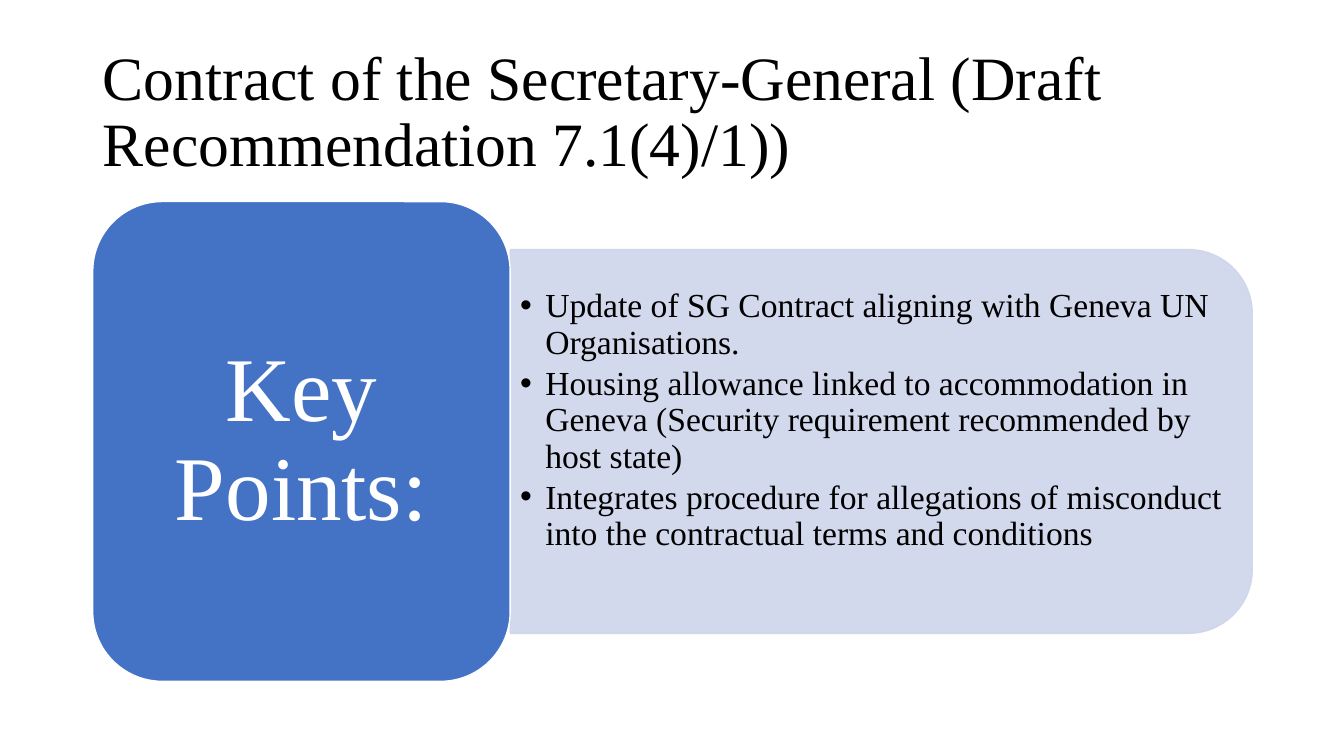
from lxml import etree
from pptx import Presentation
from pptx.dml.color import RGBColor
from pptx.enum.shapes import MSO_SHAPE as Shape
from pptx.enum.text import MSO_ANCHOR as Anchor, MSO_AUTO_SIZE as AutoSize, PP_ALIGN as Align
from pptx.oxml.ns import qn
from pptx.util import Inches, Pt

FONT = "Times New Roman"
BLACK, WHITE, BLUE, PALE_BLUE = "000000", "FFFFFF", "4472C4", "CFD5EA"

TITLE = "Contract of the Secretary-General (Draft Recommendation 7.1(4)/1))"
KEY_POINTS = [
    "Update of SG Contract aligning with Geneva UN Organisations.",
    "Housing allowance linked to accommodation in Geneva "
    "(Security requirement recommended by host state)",
    "Integrates procedure for allegations of misconduct "
    "into the contractual terms and conditions",
]


def rgb(color):
    return RGBColor.from_string(color)


def add_bullet(paragraph, indent):
    properties = paragraph._p.get_or_add_pPr()
    properties.set("marL", str(Inches(indent)))
    properties.set("indent", str(-Inches(indent)))
    etree.SubElement(properties, qn("a:buFont")).set("typeface", "Arial")
    etree.SubElement(properties, qn("a:buChar")).set("char", "•")


def write_text(shape, lines, size, color=BLACK, align=Align.LEFT, after=0,
               insets=(0.1, 0.05, 0.1, 0.05), bullet_indent=None):
    frame = shape.text_frame
    frame.word_wrap = True
    frame.auto_size = AutoSize.NONE
    frame.vertical_anchor = Anchor.MIDDLE
    (frame.margin_left, frame.margin_top,
     frame.margin_right, frame.margin_bottom) = map(Inches, insets)
    for index, line in enumerate(lines):
        paragraph = frame.add_paragraph() if index else frame.paragraphs[0]
        paragraph.alignment = align
        paragraph.line_spacing = 0.9
        paragraph.space_before = Pt(0)
        paragraph.space_after = Pt(after)
        if bullet_indent:
            add_bullet(paragraph, bullet_indent)
        run = paragraph.add_run()
        run.text = line
        run.font.name = FONT
        run.font.size = Pt(size)
        run.font.color.rgb = rgb(color)


def add_box(slide, kind, left, top, width, height, fill, line, opacity=None):
    shape = slide.shapes.add_shape(kind, *map(Inches, (left, top, width, height)))
    shape.shadow.inherit = False
    shape.fill.solid()
    shape.fill.fore_color.rgb = rgb(fill)
    shape.line.color.rgb = rgb(line)
    shape.line.width = Pt(1)
    if opacity:
        for color in shape._element.spPr.iter(qn("a:srgbClr")):
            etree.SubElement(color, qn("a:alpha")).set("val", str(opacity * 1000))
    return shape


def add_title(slide, left, top, width, height):
    title = slide.shapes.title
    title.left, title.top, title.width, title.height = map(
        Inches, (left, top, width, height))
    write_text(title, [TITLE], 44)


def add_key_points(slide, left, top, width, height):
    label_width = 0.36 * width
    panel_left, panel_width = left + label_width, width - label_width
    panel_height = 0.8 * height
    middle = top + height / 2

    # Pale panel: a shape with two rounded top corners, turned to the right
    panel = add_box(slide, Shape.ROUND_2_SAME_RECTANGLE,
                    panel_left + (panel_width - panel_height) / 2,
                    middle - panel_width / 2,
                    panel_height, panel_width, PALE_BLUE, PALE_BLUE, opacity=90)
    panel.rotation = 90

    # Bulleted points, held above the middle by a deeper bottom inset
    text_height = panel_height - 0.37
    points = slide.shapes.add_textbox(*map(Inches, (
        panel_left, middle - text_height / 2, panel_width - 0.19, text_height)))
    write_text(points, KEY_POINTS, 24, after=3.6, bullet_indent=0.25,
               insets=(0.1, 0.05, 0.1, 0.46))

    # Blue label
    label = add_box(slide, Shape.ROUNDED_RECTANGLE, left, top, label_width, height,
                    BLUE, WHITE)
    write_text(label, ["Key Points:"], 65, WHITE, Align.CENTER,
               insets=(0.27, 0.14, 0.27, 0.14))


def main():
    presentation = Presentation()
    presentation.slide_width = Inches(13.33)
    presentation.slide_height = Inches(7.5)
    slide = presentation.slides.add_slide(presentation.slide_layouts[5])
    add_title(slide, 0.92, 0.4, 11.5, 1.45)
    add_key_points(slide, 0.92, 2, 11.5, 4.76)
    presentation.save("out.pptx")


if __name__ == "__main__":
    main()
